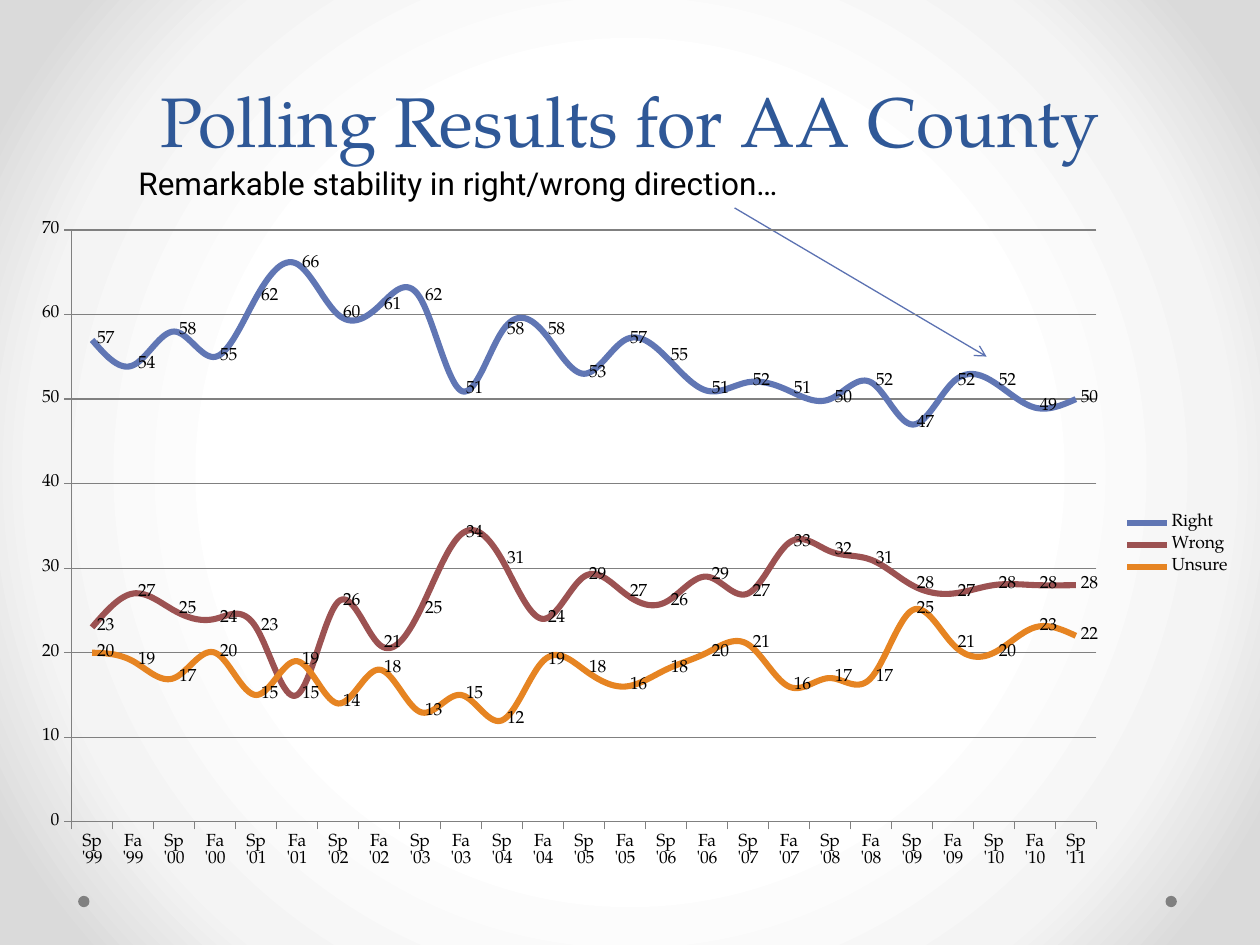
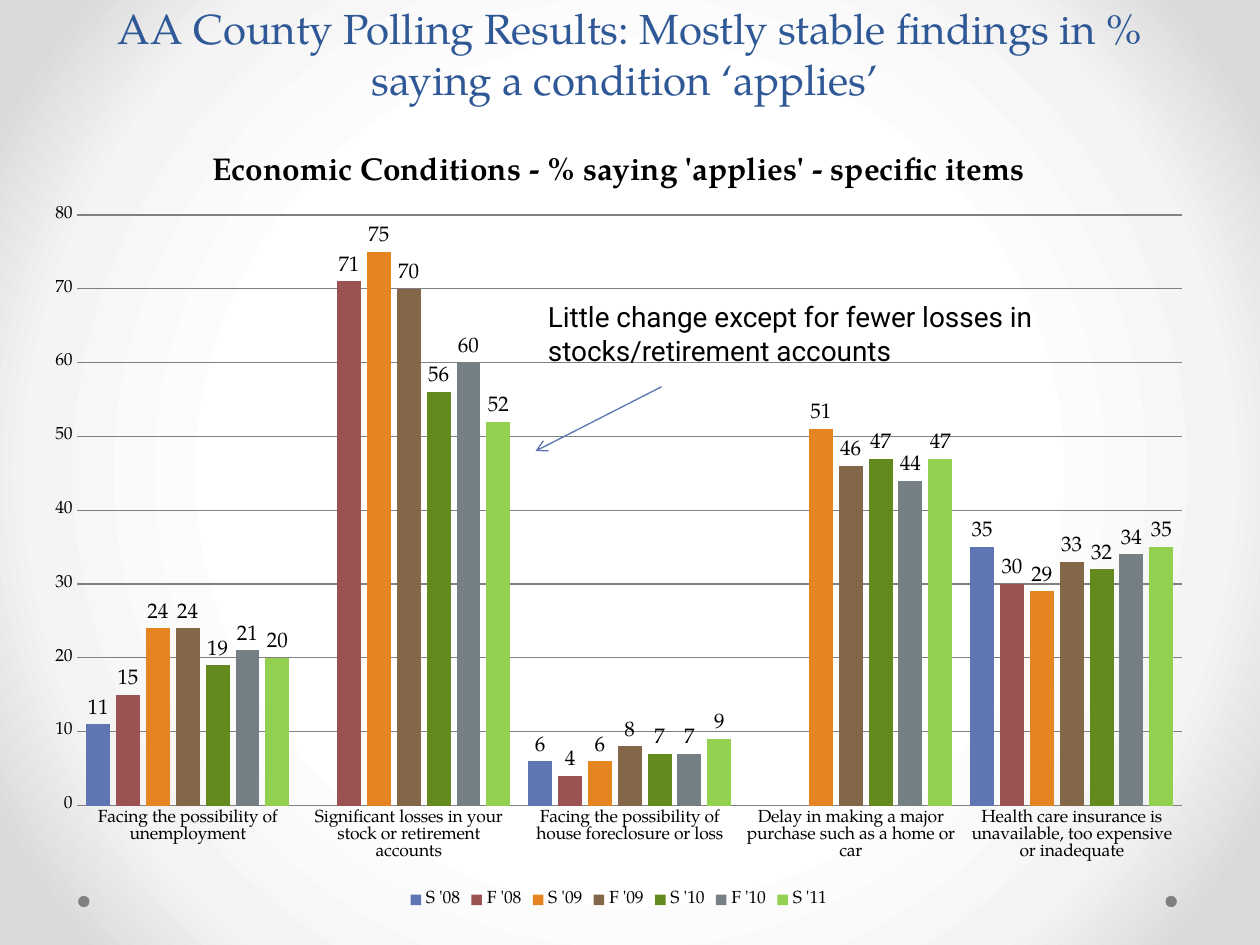
from lxml.etree import SubElement as Sub
from pptx import Presentation
from pptx.chart.data import CategoryChartData as Data
from pptx.dml.color import RGBColor
from pptx.enum.chart import XL_CHART_TYPE as Kind
from pptx.enum.chart import XL_LABEL_POSITION as Spot
from pptx.enum.chart import XL_LEGEND_POSITION as Side
from pptx.enum.chart import XL_TICK_MARK as Tick
from pptx.enum.shapes import MSO_CONNECTOR as Link
from pptx.enum.shapes import MSO_SHAPE as Form
from pptx.enum.text import MSO_ANCHOR as Anchor
from pptx.enum.text import PP_ALIGN as Align
from pptx.oxml.ns import qn
from pptx.util import Inches, Pt

SERIF, SANS = "TeX Gyre Pagella", "Roboto"
NAVY, BLACK, GREY, BLUE = "2F5897", "000000", "808080", "5C72B2"
GLOW = [(50, "FFFFFF"), (76, "F4F4F4"), (92, "DADADA")]
HUES = ["6076B4", "9C5252", "E68422", "846648", "63891F", "758085", "92D050"]

TERMS = [f"{term} '{year:02}" for year in (*range(99, 100), *range(0, 12))
         for term in ("Sp", "Fa")][:-1]
MOODS = {
    "Right": [57, 54, 58, 55, 62, 66, 60, 61, 62, 51, 58, 58, 53,
              57, 55, 51, 52, 51, 50, 52, 47, 52, 52, 49, 50],
    "Wrong": [23, 27, 25, 24, 23, 15, 26, 21, 25, 34, 31, 24, 29,
              27, 26, 29, 27, 33, 32, 31, 28, 27, 28, 28, 28],
    "Unsure": [20, 19, 17, 20, 15, 19, 14, 18, 13, 15, 12, 19, 18,
               16, 18, 20, 21, 16, 17, 17, 25, 21, 20, 23, 22],
}
ITEMS = [
    "Facing the possibility of unemployment",
    "Significant losses in your stock or retirement accounts",
    "Facing the possibility of house foreclosure or loss",
    "Delay in making a major purchase such as a home or car",
    "Health care insurance is unavailable, too expensive or inadequate",
]
SHARES = {
    "S '08": [11, None, 6, None, 35],
    "F '08": [15, 71, 4, None, 30],
    "S '09": [24, 75, 6, 51, 29],
    "F '09": [24, 70, 8, 46, 33],
    "S '10": [19, 56, 7, 47, 32],
    "F '10": [21, 60, 7, 44, 34],
    "S '11": [20, 52, 9, 47, 35],
}


def color(code):
    return RGBColor.from_string(code)


def style(font, size, face=SERIF, hue=BLACK, bold=None):
    font.size, font.name, font.bold = Pt(size), face, bold
    font.color.rgb = color(hue)


def write(slide, text, box, size, face=SANS, hue=BLACK,
          align=Align.LEFT, anchor=Anchor.TOP, pitch=None):
    frame = slide.shapes.add_textbox(*map(Inches, box)).text_frame
    frame.word_wrap = True
    frame.vertical_anchor = anchor
    para = frame.paragraphs[0]
    para.alignment = align
    if pitch:
        para.line_spacing = Pt(pitch)
    run = para.add_run()
    run.text = text
    style(run.font, size, face, hue)


def title(slide, text, box, size, pitch=None):
    write(slide, text, box, size, SERIF, NAVY, Align.CENTER,
          Anchor.BOTTOM, pitch)


def glow(master):
    """Radial background, white in the middle."""
    master.background.fill.solid()
    solid = master.element.find(".//" + qn("p:bgPr"))[0]
    grad = solid.makeelement(qn("a:gradFill"), {"rotWithShape": "1"})
    stops = Sub(grad, qn("a:gsLst"))
    for place, code in GLOW:
        stop = Sub(stops, qn("a:gs"), pos=str(place * 1000))
        Sub(stop, qn("a:srgbClr"), val=code)
    ring = Sub(grad, qn("a:path"), path="circle")
    Sub(ring, qn("a:fillToRect"), dict.fromkeys("ltrb", "50000"))
    solid.getparent().replace(solid, grad)


def dots(slide):
    for left in (0.62, 9.25):
        dot = slide.shapes.add_shape(
            Form.OVAL, *map(Inches, (left, 7.11, 0.09, 0.09)))
        dot.shadow.inherit = False
        dot.fill.solid()
        dot.fill.fore_color.rgb = color(GREY)
        dot.line.fill.background()


def arrow(slide, start, end):
    line = slide.shapes.add_connector(
        Link.STRAIGHT, *map(Inches, (*start, *end)))
    line.line.color.rgb = color(BLUE)
    line.line.width = Pt(0.75)
    Sub(line.line._get_or_add_ln(), qn("a:tailEnd"), type="arrow")
    Sub(line.element.spPr, qn("a:effectLst"))


def rule(line):
    line.color.rgb = color(GREY)
    line.width = Pt(0.75)


def inset(chart, area):
    """Fix the inner plot area, in fractions of the chart."""
    plot = chart.element.find(".//" + qn("c:plotArea"))
    for old in plot.findall(qn("c:layout")):
        plot.remove(old)
    layout = plot.makeelement(qn("c:layout"), {})
    plot.insert(0, layout)
    manual = Sub(layout, qn("c:manualLayout"))
    Sub(manual, qn("c:layoutTarget"), val="inner")
    for key in "xy":
        Sub(manual, qn(f"c:{key}Mode"), val="edge")
    for key, part in zip("xywh", area):
        Sub(manual, qn(f"c:{key}"), val=str(part))


def graph(slide, kind, box, area, cats, rows, top, side, tick, size, spot):
    """Chart with the axes, legend and labels both slides share."""
    data = Data()
    data.categories = cats
    for name, vals in rows.items():
        data.add_series(name, vals)
    chart = slide.shapes.add_chart(kind, *map(Inches, box), data).chart
    style(chart.font, 10)
    chart.has_title = False
    chart.has_legend = True
    chart.legend.position = side
    chart.legend.include_in_layout = False
    inset(chart, area)

    # Axes
    axis = chart.value_axis
    axis.minimum_scale, axis.maximum_scale, axis.major_unit = 0, top, 10
    axis.has_major_gridlines = True
    rule(axis.major_gridlines.format.line)
    for each in (axis, chart.category_axis):
        each.major_tick_mark = tick
        each.minor_tick_mark = Tick.NONE
        rule(each.format.line)

    # Value labels
    chart.plots[0].vary_by_categories = False
    for row in chart.plots[0].series:
        tags = row.data_labels
        tags.show_value = True
        tags.position = spot
        style(tags.font, size)
    return chart


def trend(slide, box):
    chart = graph(slide, Kind.LINE, box, (0.044, 0.033, 0.836, 0.878),
                  TERMS, MOODS, 70, Side.RIGHT, Tick.OUTSIDE, 10, Spot.RIGHT)
    for row, hue in zip(chart.plots[0].series, HUES):
        row.smooth = True
        row.format.line.color.rgb = color(hue)
        row.format.line.width = Pt(3.5)


def bars(slide, box):
    chart = graph(slide, Kind.COLUMN_CLUSTERED, box,
                  (0.039, 0.113, 0.941, 0.75), ITEMS, SHARES, 80,
                  Side.BOTTOM, Tick.NONE, 12, Spot.OUTSIDE_END)
    chart.has_title = True
    head = chart.chart_title.text_frame
    head.text = "Economic Conditions - % saying 'applies' - specific items"
    style(head.paragraphs[0].runs[0].font, 18, bold=True)
    chart.value_axis.format.line.fill.background()
    plot = chart.plots[0]
    plot.gap_width, plot.overlap = 75, -25
    for row, hue in zip(plot.series, HUES):
        row.format.fill.solid()
        row.format.fill.fore_color.rgb = color(hue)


def mood(slide):
    title(slide, "Polling Results for AA County", (0.5, 0, 9, 1.33), 40, 58)
    write(slide, "Remarkable stability in right/wrong direction…",
          (1, 1.25, 7.5, 0.4), 18)
    arrow(slide, (5.83, 1.65), (7.83, 2.83))
    trend(slide, (0.14, 1.65, 9.73, 5.35))


def money(slide):
    bars(slide, (0.25, 1, 9.32, 6.25))
    title(slide, "AA County Polling Results: Mostly stable findings in % "
          "saying a condition ‘applies’ ", (0.5, 0.42, 9, 0.45), 24)
    write(slide, "Little change except for fewer losses in "
          "stocks/retirement accounts", (4.25, 2.33, 4.08, 0.64), 16)
    arrow(slide, (5.25, 3.07), (4.25, 3.58))


def main():
    deck = Presentation()
    deck.slide_width, deck.slide_height = Inches(10), Inches(7.5)
    glow(deck.slide_master)
    for fill in (mood, money):
        slide = deck.slides.add_slide(deck.slide_layouts[6])
        dots(slide)
        fill(slide)
    deck.save("out.pptx")


if __name__ == "__main__":
    main()
